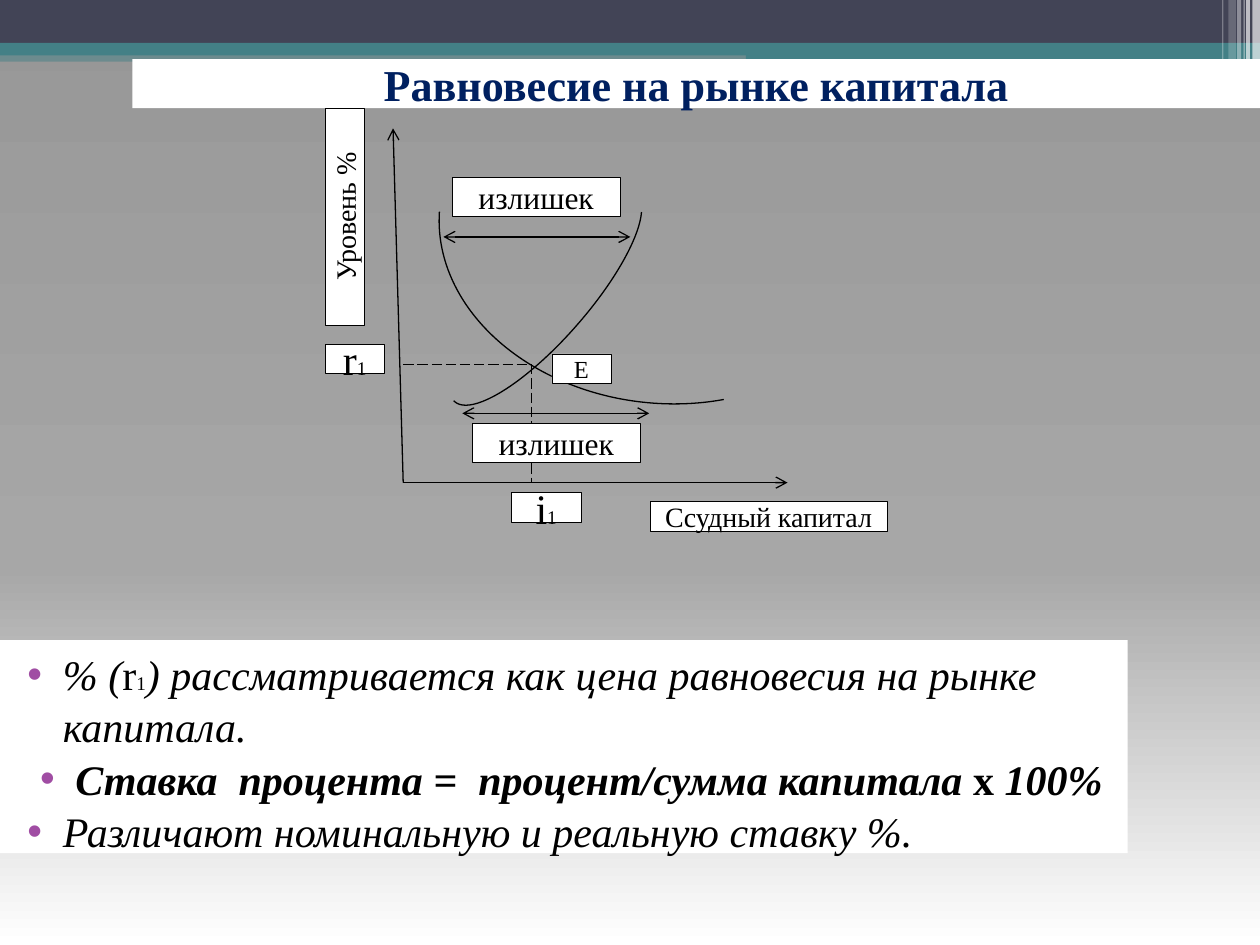
from copy import deepcopy

from lxml import etree
from pptx import Presentation
from pptx.dml.color import RGBColor
from pptx.enum.dml import MSO_LINE
from pptx.enum.shapes import MSO_CONNECTOR, MSO_SHAPE
from pptx.enum.text import MSO_ANCHOR, PP_ALIGN
from pptx.oxml.ns import qn
from pptx.util import Pt

RECT, ARC = MSO_SHAPE.RECTANGLE, MSO_SHAPE.ARC
LINE, DASH = MSO_CONNECTOR.STRAIGHT, MSO_LINE.LONG_DASH
LEFT, MID = PP_ALIGN.LEFT, PP_ALIGN.CENTER
TOP, CORE = MSO_ANCHOR.TOP, MSO_ANCHOR.MIDDLE

SLATE, TEAL, WHITE, BLACK = "424456", "438086", "FFFFFF", "000000"
NAVY, PLUM = "002060", "A04DA3"


def rgb(code):
    return RGBColor.from_string(code)


def sub(node, tag, **attrs):
    """Append a child element and return it."""
    child = etree.SubElement(node, qn(tag))
    for name, value in attrs.items():
        child.set(name, str(value))
    return child


class Deck:
    font = "Times New Roman"
    thin, edge = 0.75, 0.25

    def __init__(self, slide):
        self.slide = slide

    def back(self, stops):
        """Fill the background with a gradient from top to bottom."""
        fill = self.slide.background.fill
        fill.gradient()
        fill.gradient_angle = 270
        first = self.slide.element.find(".//" + qn("a:gs"))
        for _ in stops[2:]:
            first.addnext(deepcopy(first))
        for stop, (place, code) in zip(fill.gradient_stops, stops):
            stop.position = place
            stop.color.rgb = rgb(code)

    def form(self, kind, box):
        shape = self.slide.shapes.add_shape(kind, *map(Pt, box))
        shape.shadow.inherit = False
        return shape

    def rect(self, box, fill, alpha=100, edge=None):
        shape = self.form(RECT, box)
        shape.fill.solid()
        shape.fill.fore_color.rgb = rgb(fill)
        if alpha < 100:
            tone = shape.element.spPr.find(".//" + qn("a:srgbClr"))
            sub(tone, "a:alpha", val=alpha * 1000)
        if edge:
            self.pen(shape.line, edge)
        else:
            shape.line.fill.background()
        return shape

    def pen(self, line, width):
        line.color.rgb = rgb(BLACK)
        line.width = Pt(width)

    def arc(self, box, turn, ends):
        shape = self.form(ARC, box)
        shape.fill.background()
        self.pen(shape.line, self.thin)
        shape.rotation = turn
        for i, end in enumerate(ends):
            shape.adjustments[i] = end

    def line(self, start, end, tips=(), dash=None):
        wire = self.slide.shapes.add_connector(LINE, *map(Pt, start + end))
        self.pen(wire.line, self.thin)
        if dash:
            wire.line.dash_style = dash
        trim = wire.element.spPr
        for tip in tips:
            sub(trim.find(qn("a:ln")), tip, type="arrow")
        sub(trim, "a:effectLst")

    def text(self, par, runs, align=MID, color=BLACK):
        """Add runs given as (text, size, format values)."""
        par.alignment = align
        for words, size, look in runs:
            run = par.add_run()
            run.text = words
            run.font.color.rgb = rgb(color)
            style = {"name": self.font, "size": Pt(size),
                     "bold": False, "italic": False, **look}
            for name, value in style.items():
                setattr(run.font, name, value)

    def label(self, box, *runs, vert=None):
        shape = self.rect(box, WHITE, edge=self.edge)
        frame = shape.text_frame
        frame.word_wrap, frame.vertical_anchor = True, CORE
        self.text(frame.paragraphs[0], [(*run, {}) for run in runs])
        if vert:
            shape.element.txBody.find(qn("a:bodyPr")).set("vert", vert)

    def title(self, box, words):
        frame = self.rect(box, WHITE).text_frame
        frame.word_wrap, frame.vertical_anchor = True, CORE
        self.text(frame.paragraphs[0], [(words, 25.2, {"bold": True})],
                  color=NAVY)

    def points(self, box, items):
        """Draw a bulleted list of (alignment, runs)."""
        frame = self.rect(box, WHITE).text_frame
        frame.word_wrap, frame.vertical_anchor = True, TOP
        for i, (align, runs) in enumerate(items):
            par = frame.add_paragraph() if i else frame.paragraphs[0]
            self.text(par, runs, align)
            par.line_spacing = 1.04
            props = par._p.get_or_add_pPr()
            props.set("marL", str(Pt(28.8)))
            props.set("indent", str(-Pt(20.2)))
            sub(sub(props, "a:buClr"), "a:srgbClr", val=PLUM)
            sub(props, "a:buFont", typeface="Arial")
            sub(props, "a:buChar", char="•")


def main():
    show = Presentation()
    show.slide_width, show.slide_height = Pt(720), Pt(540)
    deck = Deck(show.slides.add_slide(show.slide_layouts[6]))
    deck.back([(0, "979797"), (0.6, "A7A7A7"), (1, WHITE)])

    # Header bands and the light strips at their right end
    for x, y, high, fill, alpha in [
            (0, 28.8, 6.5, TEAL, 50), (0, 0, 24.5, SLATE, 100),
            (0, 24.5, 7.2, TEAL, 100), (426.2, 28.1, 7.2, TEAL, 100),
            (426.2, 34.6, 14.4, TEAL, 50)]:
        deck.rect((x, y, 720 - x, high), fill, alpha)
    for x, wide, high, alpha in [
            (715.7, 4.3, 49, 65), (712.1, 2.2, 49, 65), (710.6, 0.7, 49, 60),
            (707, 2.2, 49, 40), (702, 4.3, 46, 20), (698.4, 0.7, 46, 30)]:
        deck.rect((x, 0, wide, high), WHITE, alpha)

    deck.title((75.6, 33.8, 644.4, 28.1), "Равновесие на рынке капитала")
    slant, bold = {"italic": True}, {"italic": True, "bold": True}
    deck.points((0, 365.8, 644.4, 121.7), [
        (LEFT, [("% (", 24, slant), ("r", 24, {}), ("1", 11, {}),
                (") рассматривается как цена равновесия на рынке капитала.",
                 24, slant)]),
        (MID, [("Ставка  процента =  процент/сумма капитала ", 24, bold),
               ("х ", 24, {"bold": True}), ("100%", 24, bold)]),
        (LEFT, [("Различают номинальную и реальную ставку %.", 24, slant)]),
    ])

    # Axes, supply and demand curves, guides to the balance point
    zero, level, cross = (230.4, 275.8), 208.1, 303.8
    tail, both = ["a:tailEnd"], ["a:headEnd", "a:tailEnd"]
    deck.line(zero, (224.6, 73.4), tail)
    deck.line(zero, (450, zero[1]), tail)
    deck.arc((288, 91.4, 47.5, 157.7), 41.2, (166.19, 54.35))
    deck.arc((250.6, 33.1, 254.9, 197.3), 186.3, (146.1, 215.13))
    deck.line((zero[0], level), (cross, level), dash=DASH)
    deck.line((cross, level), (cross, zero[1]), dash=DASH)

    deck.label((185.8, 196.6, 33.8, 16.9), ("r", 24), ("1", 11))
    deck.label((292.3, 281.5, 39.6, 16.9), ("i", 24), ("1", 11))
    deck.label((315.4, 202.3, 33.8, 16.9), ("Е", 14))
    deck.label((185.8, 61.9, 22.3, 123.8), ("Уровень %", 16), vert="vert270")
    deck.label((371.5, 286.6, 135.4, 16.9), ("Ссудный капитал", 16))
    for x, y, left, high in [(253.4, 135.4, 258.5, 101.5),
                             (264.2, 236.2, 270, 241.9)]:
        deck.line((x, y), (x + 106.8, y), both)
        deck.label((left, high, 95.8, 22.3), ("излишек", 18))

    show.save("out.pptx")


if __name__ == "__main__":
    main()
